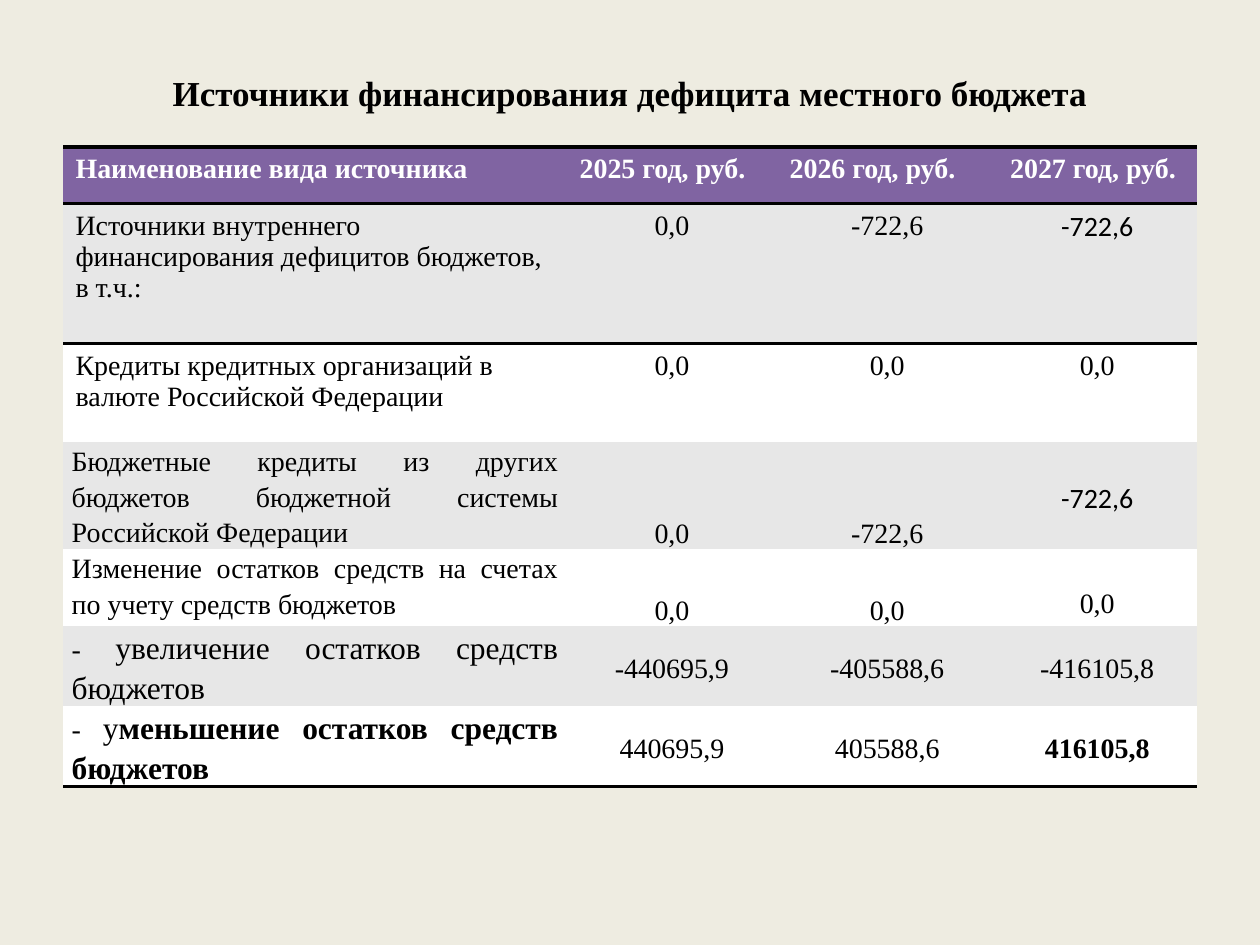
from lxml.etree import SubElement
from pptx import Presentation
from pptx.dml.color import RGBColor
from pptx.enum.text import MSO_ANCHOR, PP_ALIGN
from pptx.oxml.ns import qn
from pptx.util import Pt

BACKGROUND = RGBColor(0xEE, 0xEC, 0xE1)
PURPLE = RGBColor(0x80, 0x64, 0xA2)
GREY = RGBColor(0xE7, 0xE7, 0xE7)
WHITE = RGBColor(0xFF, 0xFF, 0xFF)
BLACK = RGBColor(0x00, 0x00, 0x00)

SERIF = "Times New Roman"
SANS = "Calibri"
NO_STYLE = "{2D5ABB26-0587-4C30-8999-92F81FD0307C}"

COLUMN_WIDTHS = [288, 120, 126, 114]
ROW_HEIGHTS = [32.5, 80, 56, 41, 41, 41, 41]
BLANK_LINE = 19

HEADER = ["Наименование вида источника", "2025 год, руб.", "2026 год, руб.", "2027 год, руб."]
# Each name is a list of (text, size, bold) pieces
SOURCES = [
    ([("Источники внутреннего финансирования дефицитов бюджетов, в т.ч.:", 16, False)],
     ["0,0", "-722,6", "-722,6"]),
    ([("Кредиты кредитных организаций в валюте Российской Федерации", 16, False)],
     ["0,0", "0,0", "0,0"]),
    ([("Бюджетные кредиты из других бюджетов бюджетной системы Российской Федерации", 16, False)],
     ["0,0", "-722,6", "-722,6"]),
    ([("Изменение остатков средств на счетах по учету средств бюджетов", 16, False)],
     ["0,0", "0,0", "0,0"]),
    ([("- ", 16, False), ("увеличение остатков средств бюджетов", 18, False)],
     ["-440695,9", "-405588,6", "-416105,8"]),
    ([("- ", 16, False), ("у", 18, False), ("меньшение остатков средств бюджетов", 18, True)],
     ["440695,9", "405588,6", "416105,8"]),
]


def style_font(font, size, bold, color, name=SERIF):
    font.name = name
    font.size = Pt(size)
    font.bold = bold
    font.color.rgb = color


def add_title(slide, text):
    title = slide.shapes.title
    title.left, title.top, title.width, title.height = Pt(36), Pt(21.5), Pt(648), Pt(63)
    title.text_frame.text = text
    title.text_frame.vertical_anchor = MSO_ANCHOR.MIDDLE
    heading = title.text_frame.paragraphs[0]
    heading.alignment = PP_ALIGN.CENTER
    style_font(heading.runs[0].font, 20, True, BLACK)


def add_rule(cell, side):
    """Draw a black 2 pt border on one side ("lnT" or "lnB"); call before filling."""
    border = SubElement(cell._tc.get_or_add_tcPr(), qn(f"a:{side}"), w=str(Pt(2)))
    fill = SubElement(border, qn("a:solidFill"))
    SubElement(fill, qn("a:srgbClr"), val=str(BLACK))


def fill_cell(cell, pieces, fill, color=BLACK, align=PP_ALIGN.LEFT, font_name=SERIF):
    cell.fill.solid()
    cell.fill.fore_color.rgb = fill
    paragraph = cell.text_frame.paragraphs[0]
    paragraph.alignment = align
    for text, size, bold in pieces:
        run = paragraph.add_run()
        run.text = text
        style_font(run.font, size, bold, color, font_name)


def make_compact(cell, anchor):
    cell.margin_left = cell.margin_right = Pt(5)
    cell.margin_top = cell.margin_bottom = 0
    cell.vertical_anchor = anchor
    cell.text_frame.paragraphs[0].line_spacing = 1.15


def add_header(table):
    for column, label in enumerate(HEADER):
        cell = table.cell(0, column)
        add_rule(cell, "lnT")
        add_rule(cell, "lnB")
        fill_cell(cell, [(label, 16, True)], PURPLE, WHITE)


def add_source(table, row, name, amounts):
    fill = GREY if row % 2 else WHITE
    compact = row >= 3
    lowered = row in (3, 4)
    last = row == len(SOURCES)
    cells = [table.cell(row, column) for column in range(len(HEADER))]

    # Rules under the header and under the last row
    for cell in cells:
        if row == 1:
            add_rule(cell, "lnT")
        if last:
            add_rule(cell, "lnB")

    # Name of the source
    fill_cell(cells[0], name, fill, align=PP_ALIGN.JUSTIFY if compact else PP_ALIGN.LEFT)
    if compact:
        make_compact(cells[0], MSO_ANCHOR.TOP)

    # Amounts by year
    for year, (cell, amount) in enumerate(zip(cells[1:], amounts), 2025):
        final_year = year == 2027
        font_name = SANS if final_year and amount == "-722,6" else SERIF
        fill_cell(cell, [(amount, 16, last and final_year)], fill,
                  align=PP_ALIGN.CENTER, font_name=font_name)
        if lowered and final_year:
            cell.margin_top = Pt(3.6 + BLANK_LINE)
        elif compact:
            make_compact(cell, MSO_ANCHOR.BOTTOM if lowered else MSO_ANCHOR.MIDDLE)


def add_sources_table(slide):
    frame = slide.shapes.add_table(len(ROW_HEIGHTS), len(COLUMN_WIDTHS), Pt(36), Pt(84),
                                   Pt(sum(COLUMN_WIDTHS)), Pt(sum(ROW_HEIGHTS)))
    table = frame.table
    table.horz_banding = False
    table._tbl.tblPr.find(qn("a:tableStyleId")).text = NO_STYLE
    for column, width in zip(table.columns, COLUMN_WIDTHS):
        column.width = Pt(width)
    for row, height in zip(table.rows, ROW_HEIGHTS):
        row.height = Pt(height)

    add_header(table)
    for row, (name, amounts) in enumerate(SOURCES, 1):
        add_source(table, row, name, amounts)


def main():
    presentation = Presentation()
    presentation.slide_width, presentation.slide_height = Pt(720), Pt(540)
    slide = presentation.slides.add_slide(presentation.slide_layouts[5])
    slide.background.fill.solid()
    slide.background.fill.fore_color.rgb = BACKGROUND

    add_title(slide, "Источники финансирования дефицита местного бюджета")
    add_sources_table(slide)
    presentation.save("out.pptx")


if __name__ == "__main__":
    main()
